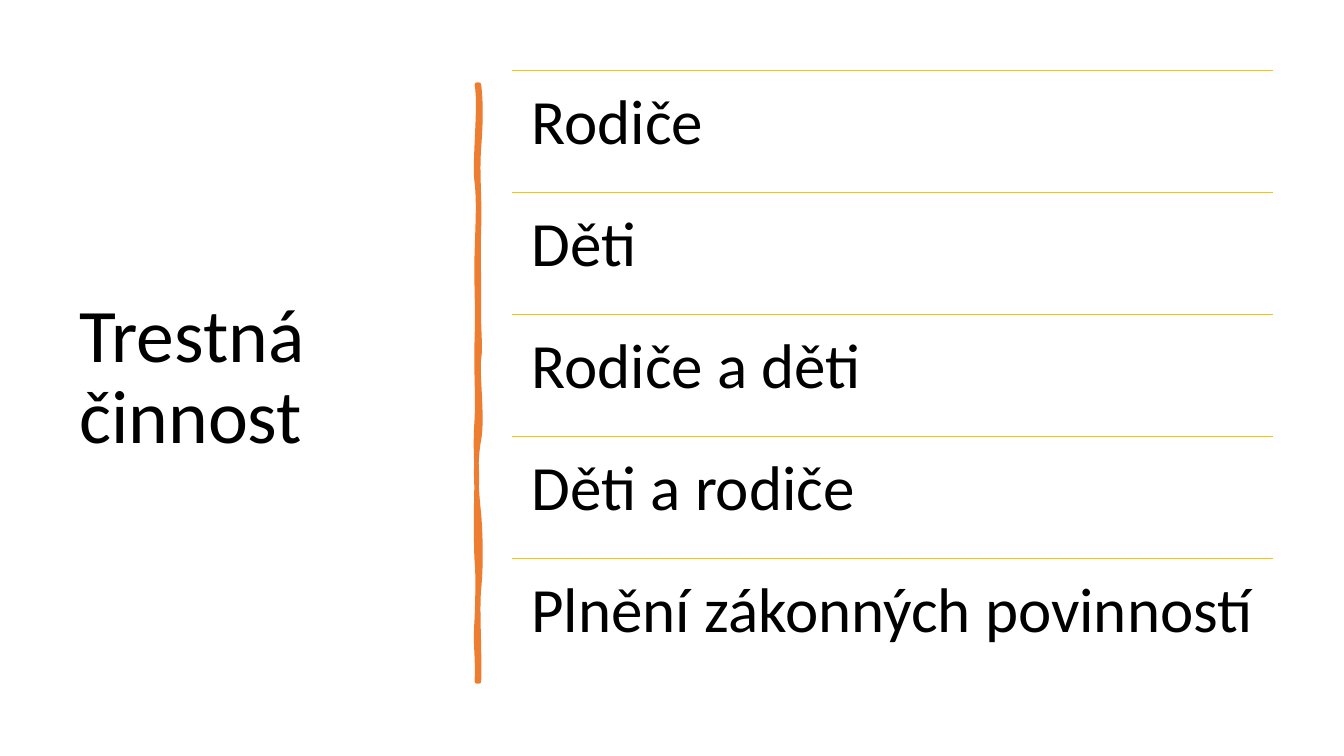
from lxml import etree
from pptx import Presentation
from pptx.dml.color import RGBColor
from pptx.enum.shapes import MSO_CONNECTOR
from pptx.enum.text import MSO_ANCHOR
from pptx.oxml.ns import qn
from pptx.util import Pt

PX = 9144  # EMU per px, 100 px to the inch
BLACK = RGBColor(0x00, 0x00, 0x00)
ORANGE = RGBColor(0xED, 0x7D, 0x31)
GOLD = RGBColor(0xFF, 0xC0, 0x00)
STRAIGHT = MSO_CONNECTOR.STRAIGHT
TOP, MIDDLE = MSO_ANCHOR.TOP, MSO_ANCHOR.MIDDLE

ITEMS = ["Rodiče", "Děti", "Rodiče a děti", "Děti a rodiče",
         "Plnění zákonných povinností"]

# Upright brush stroke: two control points and an end per curve
BRUSH_START = (2, 0)
BRUSH_EDGE = [
    ((4, 18), (4, 35), (2, 62)), ((0, 89), (3, 111), (2, 142)),
    ((1, 173), (2, 178), (2, 210)), ((1, 241), (4, 258), (2, 272)),
    ((0, 286), (6, 330), (2, 352)), ((-2, 373), (-1, 400), (2, 426)),
    ((4, 452), (4, 480), (2, 500)), ((0, 519), (3, 566), (2, 592)),
    ((1, 592), (0, 592), (0, 592)), ((1, 562), (-2, 560), (0, 529)),
    ((1, 499), (1, 486), (0, 473)), ((-1, 460), (-1, 411), (0, 393)),
    ((0, 375), (-2, 361), (0, 331)), ((1, 302), (-1, 289), (0, 251)),
    ((1, 214), (-1, 197), (0, 166)), ((1, 134), (2, 116), (0, 97)),
    ((-3, 79), (4, 20), (0, 0)), ((1, 0), (1, 0), (2, 0)),
]
BRUSH_BODY = [
    ((2, 31), (-1, 41), (2, 68)), ((4, 95), (1, 113), (2, 124)),
    ((3, 136), (1, 171), (2, 210)), ((3, 249), (0, 259), (2, 278)),
    ((4, 297), (4, 313), (2, 346)), ((-1, 379), (2, 390), (2, 432)),
    ((2, 473), (1, 469), (2, 494)), ((3, 519), (1, 563), (2, 592)),
    ((1, 591), (0, 591), (0, 592)), ((-3, 565), (1, 548), (0, 529)),
    ((-1, 511), (2, 485), (0, 455)), ((-2, 426), (3, 416), (0, 387)),
    ((-3, 358), (4, 336), (0, 302)), ((-4, 267), (1, 241), (0, 216)),
    ((-2, 191), (-2, 175), (0, 154)), ((1, 132), (1, 101), (0, 80)),
    ((-2, 59), (2, 37), (0, 0)), ((1, 0), (1, 0), (2, 0)),
]


def add_text(shapes, text, box, size, inset, anchor):
    tf = shapes.add_textbox(*(v * PX for v in box)).text_frame
    inset_x, inset_y = inset
    frame_format = {
        "word_wrap": True, "vertical_anchor": anchor,
        "margin_left": inset_x * PX, "margin_right": inset_x * PX,
        "margin_top": inset_y * PX, "margin_bottom": inset_y * PX,
    }
    for name, value in frame_format.items():
        setattr(tf, name, value)
    p = tf.paragraphs[0]
    p.line_spacing = 0.9
    r = p.add_run()
    r.text = text
    for name, value in {"name": "Calibri", "size": Pt(size)}.items():
        setattr(r.font, name, value)
    r.font.color.rgb = BLACK


def add_rule(shapes, left, top, width):
    line = shapes.add_connector(STRAIGHT, left * PX, top * PX,
                                (left + width) * PX, top * PX)
    line.line.color.rgb = GOLD
    line.line.width = Pt(1)
    etree.SubElement(line._element.spPr, qn("a:effectLst"))


def add_curved_path(path_list, curves, size, **paint):
    """Add a closed Bézier path, laid on its side in a frame of the given size."""
    length, breadth = size
    path = etree.SubElement(path_list, qn("a:path"),
                            w=str(length), h=str(breadth), **paint)
    for tag, points in [("a:moveTo", [BRUSH_START]),
                        *(("a:cubicBezTo", curve) for curve in curves)]:
        step = etree.SubElement(path, qn(tag))
        for across, along in points:
            etree.SubElement(step, qn("a:pt"), x=str(along), y=str(breadth - across))
    etree.SubElement(path, qn("a:close"))


def add_brush_stroke(s, box):
    """Draw the stroke in a lying box, then turn it upright about its middle."""
    left, top, length, breadth = box
    builder = s.shapes.build_freeform(0, 0, scale=PX)
    builder.add_line_segments([(length, 0), (length, breadth), (0, breadth)])
    brush = builder.convert_to_shape(left * PX, top * PX)
    path_list = brush._element.spPr.find(".//" + qn("a:pathLst"))
    path_list.clear()
    add_curved_path(path_list, BRUSH_EDGE, (length, breadth), fill="none")
    add_curved_path(path_list, BRUSH_BODY, (length, breadth), stroke="0")
    brush.rotation = 90
    brush.shadow.inherit = False
    brush.fill.solid()
    brush.fill.fore_color.rgb = ORANGE
    brush.line.color.rgb = ORANGE
    brush.line.width = Pt(3.25)


def add_ruled_list(s, items, box):
    left, top, width, height = box
    row = height // len(items)
    shapes = s.shapes.add_group_shape().shapes
    for i, item in enumerate(items):
        y = top + i * row
        add_rule(shapes, left, y, width)
        add_text(shapes, item, (left, y, width, row), 45, (19, 19), TOP)


def main():
    prs = Presentation()
    prs.slide_width, prs.slide_height = 1333 * PX, 750 * PX
    s = prs.slides.add_slide(prs.slide_layouts[6])
    add_text(s.shapes, "Trestná činnost", (69, 70, 374, 611), 54, (10, 5), MIDDLE)
    add_brush_stroke(s, (178, 379, 592, 2))
    add_ruled_list(s, ITEMS, (508, 70, 755, 605))
    prs.save("out.pptx")


if __name__ == "__main__":
    main()
